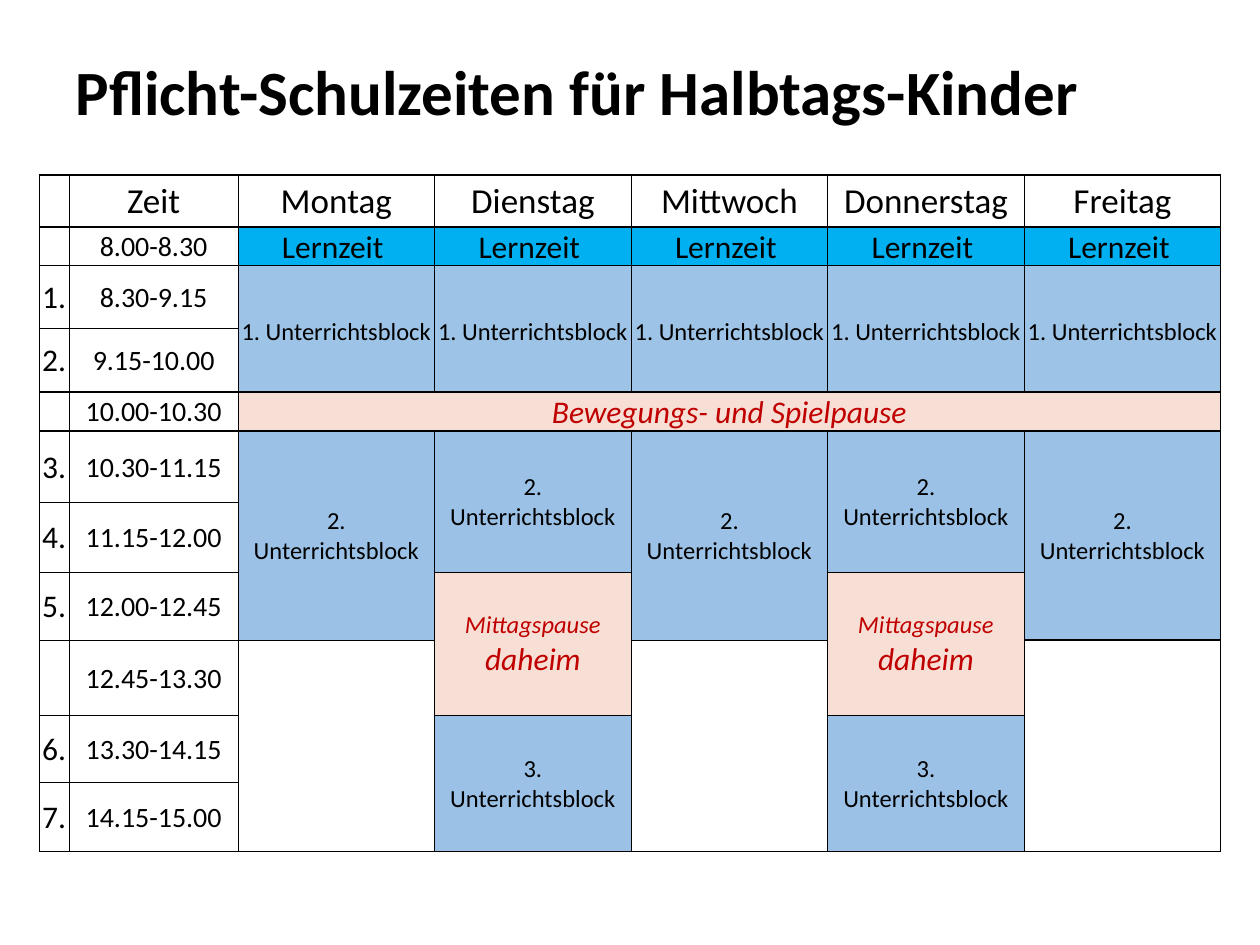
from lxml import etree
from pptx import Presentation
from pptx.dml.color import RGBColor
from pptx.enum import text
from pptx.oxml.ns import qn
from pptx import util as u

HUES = {"ink": "000000", "red": "C00000", "white": "FFFFFF", "learn": "00B0F0",
        "first": "9DC3E6", "block": "9BC2E6", "pause": "F7DFD5"}
PLAIN = "{2D5ABB26-0587-4C30-8999-92F81FD0307C}"
WIDTHS = [0.24, 1.34] + [1.56] * 5
HEIGHTS = [0.41, 0.31, 0.5, 0.5, 0.31, 0.57, 0.55, 0.54, 0.6, 0.53, 0.55]
DAYS = ["Montag", "Dienstag", "Mittwoch", "Donnerstag", "Freitag"]
TIMES = [("", "8.00-8.30"), ("1.", "8.30-9.15"), ("2.", "9.15-10.00"),
         ("", "10.00-10.30"), ("3.", "10.30-11.15"), ("4.", "11.15-12.00"),
         ("5.", "12.00-12.45"), ("", "12.45-13.30"), ("6.", "13.30-14.15"),
         ("7.", "14.15-15.00")]
THICK = {0, 1, 4, 5}


def put(item, vals):
    for name, val in vals.items():
        setattr(item, name, val)


class Deck:
    font = "Calibri"
    inset = {"margin_left": u.Inches(0.01), "margin_right": u.Inches(0.01),
             "margin_top": u.Inches(0.01), "margin_bottom": u.Inches(0),
             "vertical_anchor": text.MSO_ANCHOR.MIDDLE}

    def __init__(self, wide, high):
        self.prs = Presentation()
        put(self.prs, {"slide_width": u.Inches(wide), "slide_height": u.Inches(high)})
        self.slide = self.prs.slides.add_slide(self.prs.slide_layouts[6])

    def run(self, para, words, size, hue="ink", **form):
        run = para.add_run()
        run.text = words
        put(run.font, {"name": self.font, "size": u.Pt(size), **form})
        run.font.color.rgb = RGBColor.from_string(HUES[hue])

    def title(self, words, box):
        frame = self.slide.shapes.add_textbox(*map(u.Inches, box)).text_frame
        put(frame, {"word_wrap": True, "vertical_anchor": text.MSO_ANCHOR.MIDDLE})
        para = frame.paragraphs[0]
        para.line_spacing = 0.9
        self.run(para, words, 36, bold=True)

    def grid(self, left, top):
        size = len(HEIGHTS), len(WIDTHS)
        box = left, top, sum(WIDTHS), sum(HEIGHTS)
        frame = self.slide.shapes.add_table(*size, *map(u.Inches, box))
        self.table = frame.table
        put(self.table, {"first_row": False, "horz_banding": False})
        frame._element.find(".//" + qn("a:tableStyleId")).text = PLAIN
        for col, wide in zip(self.table.columns, WIDTHS):
            col.width = u.Inches(wide)
        for row, high in zip(self.table.rows, HEIGHTS):
            row.height = u.Inches(high)

    def edge(self, cell, side, width):
        line = etree.SubElement(cell._tc.get_or_add_tcPr(), qn("a:ln" + side),
                                w=str(u.Pt(width)))
        fill = etree.SubElement(line, qn("a:solidFill"))
        etree.SubElement(fill, qn("a:srgbClr"), val=HUES["ink"])

    def cell(self, row, col, paras=(), fill="white", span=(1, 1), hue="ink", **form):
        cell = self.table.cell(row, col)
        if span != (1, 1):
            cell.merge(self.table.cell(row + span[0] - 1, col + span[1] - 1))
        put(cell, self.inset)
        for side in "LR":
            self.edge(cell, side, 0.5)
        for side, line in (("T", row), ("B", row + span[0])):
            thick = line in THICK or (line, col) == (8, 6)
            self.edge(cell, side, 1 if thick else 0.5)
        cell.fill.solid()
        cell.fill.fore_color.rgb = RGBColor.from_string(HUES[fill])
        frame = cell.text_frame
        for num, runs in enumerate(paras):
            para = frame.add_paragraph() if num else frame.paragraphs[0]
            para.alignment = text.PP_ALIGN.CENTER
            for words, size in runs:
                self.run(para, words, size, hue, **form)

    def block(self, num, row, col, rows):
        paras = [[(f"{num}.", 14)], [("Unterrichtsblock", 14)]]
        self.cell(row, col, paras, "block", (rows, 1))


def main():
    deck = Deck(10, 7.5)
    deck.title("Pflicht-Schulzeiten für Halbtags-Kinder", (0.5, 0.13, 9, 1.25))
    deck.grid(0.31, 1.39)
    deck.cell(0, 0)
    deck.cell(0, 1, [[("Zeit", 20)]])
    for row, (num, time) in enumerate(TIMES, 1):
        deck.cell(row, 0, [[(num, 18)]] if num else ())
        deck.cell(row, 1, [[(time, 16)]])
    deck.cell(4, 2, [[("Bewegungs- und Spielpause", 18)]], "pause", (1, 5),
              "red", italic=True)
    for col, day in enumerate(DAYS, 2):
        deck.cell(0, col, [[(day, 20)]])
        deck.cell(1, col, [[("Lernzeit ", 18)]], "learn")
        deck.cell(2, col, [[("1. Unterrichtsblock", 14), (" ", 18)]], "first", (2, 1))
        if day in ("Dienstag", "Donnerstag"):
            deck.block(2, 5, col, 2)
            deck.cell(7, col, [[("Mittagspause", 14)], [("daheim", 18)]], "pause",
                      (2, 1), "red", italic=True)
            deck.block(3, 9, col, 2)
        else:
            deck.block(2, 5, col, 3)
            deck.cell(8, col, span=(3, 1))
    deck.prs.save("out.pptx")


if __name__ == "__main__":
    main()
